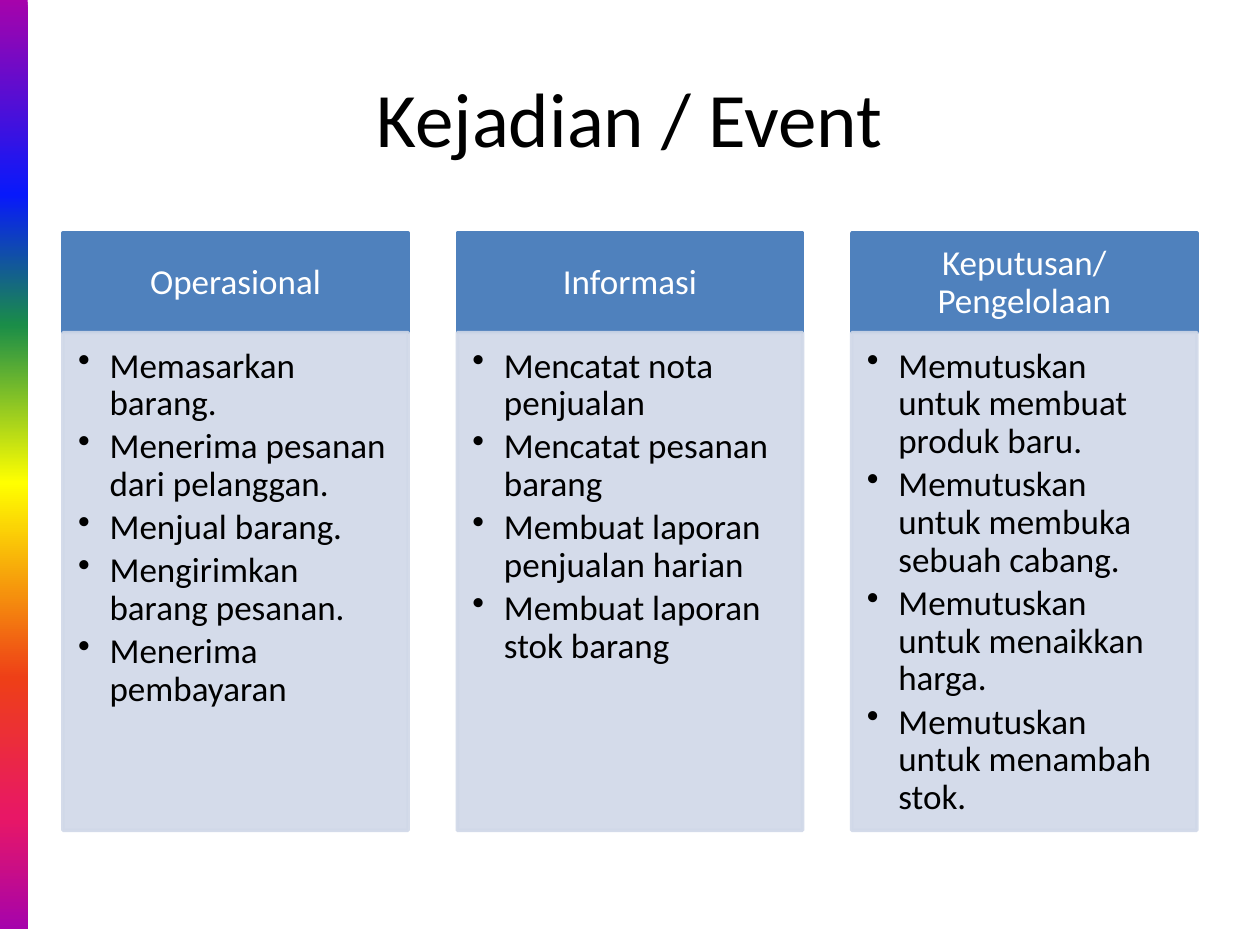
from dataclasses import dataclass

from lxml.etree import SubElement
from pptx import Presentation
from pptx.dml.color import RGBColor
from pptx.enum.shapes import MSO_SHAPE
from pptx.enum.text import MSO_ANCHOR, PP_ALIGN
from pptx.oxml.ns import qn
from pptx.util import Inches, Pt


@dataclass(frozen=True)
class Theme:
    font: str = "Calibri"
    title: int = 44
    body: int = 20
    black: str = "000000"
    white: str = "FFFFFF"
    head: str = "4F81BD"
    panel: str = "D0D8E8"
    alpha: int = 90
    rainbow: tuple = (
        (0, "A603AB"), (21, "0819FB"), (35, "1A8D48"), (52, "FFFF00"),
        (73, "EE3F17"), (88, "E81766"), (100, "A603AB"),
    )


THEME = Theme()

COLUMNS = (
    ("Operasional", (
        "Memasarkan barang.",
        "Menerima pesanan dari pelanggan.",
        "Menjual barang.",
        "Mengirimkan barang pesanan.",
        "Menerima pembayaran",
    )),
    ("Informasi", (
        "Mencatat nota penjualan",
        "Mencatat pesanan barang",
        "Membuat laporan penjualan harian",
        "Membuat laporan stok barang",
    )),
    ("Keputusan/ Pengelolaan", (
        "Memutuskan untuk membuat produk baru.",
        "Memutuskan untuk membuka sebuah cabang.",
        "Memutuskan untuk menaikkan harga.",
        "Memutuskan untuk menambah stok.",
    )),
)

# Column grid, in inches
LEFT, SPAN, WIDTH = 0.5, 9, 2.74
STEP = (SPAN - WIDTH) / (len(COLUMNS) - 1)
TOP, HEAD, BODY = 1.85, 0.79, 3.95


def add_rect(slide, *place):
    shape = slide.shapes.add_shape(MSO_SHAPE.RECTANGLE, *map(Inches, place))
    shape.shadow.inherit = False
    return shape


def paint(shape, color):
    shape.fill.solid()
    shape.fill.fore_color.rgb = RGBColor.from_string(color)
    shape.line.color.rgb = RGBColor.from_string(color)
    shape.line.width = Pt(2)


def fade(shape, alpha):
    for color in shape.element.spPr.iter(qn("a:srgbClr")):
        SubElement(color, qn("a:alpha"), val=str(alpha * 1000))


def set_frame(frame, anchor, left, top, right, bottom):
    frame.word_wrap = True
    frame.vertical_anchor = anchor
    frame.margin_left, frame.margin_top = Inches(left), Inches(top)
    frame.margin_right, frame.margin_bottom = Inches(right), Inches(bottom)


def style(para, size, color, align):
    para.alignment = align
    for run in para.runs:
        run.font.name = THEME.font
        run.font.size = Pt(size)
        run.font.color.rgb = RGBColor.from_string(color)


def add_bullet(para):
    props = para._p.get_or_add_pPr()
    props.set("marL", str(Inches(0.25)))
    props.set("indent", str(-Inches(0.25)))
    SubElement(props, qn("a:buChar"), char="•")


def add_stripe(slide):
    bar = add_rect(slide, 0, 0, 0.22, 7.37)
    bar.line.fill.background()
    bar.fill.gradient()
    bar.fill.gradient_angle = 270
    stops = bar.element.spPr.find(".//" + qn("a:gsLst"))
    for stop in list(stops):
        stops.remove(stop)
    for spot, color in THEME.rainbow:
        stop = SubElement(stops, qn("a:gs"), pos=str(spot * 1000))
        SubElement(stop, qn("a:srgbClr"), val=color)


def add_title(slide, text):
    box = slide.shapes.add_textbox(*map(Inches, (LEFT, 0.3, SPAN, 1.25)))
    frame = box.text_frame
    set_frame(frame, MSO_ANCHOR.MIDDLE, 0.1, 0.05, 0.1, 0.05)
    frame.text = text
    style(frame.paragraphs[0], THEME.title, THEME.black, PP_ALIGN.CENTER)


def add_head(slide, left, text):
    shape = add_rect(slide, left, TOP, WIDTH, HEAD)
    paint(shape, THEME.head)
    frame = shape.text_frame
    set_frame(frame, MSO_ANCHOR.MIDDLE, 0.16, 0.09, 0.16, 0.09)
    frame.text = text
    para = frame.paragraphs[0]
    para.line_spacing = 0.9
    style(para, THEME.body, THEME.white, PP_ALIGN.CENTER)


def add_list(slide, left, items):
    shape = add_rect(slide, left, TOP + HEAD, WIDTH, BODY)
    paint(shape, THEME.panel)
    fade(shape, THEME.alpha)
    frame = shape.text_frame
    set_frame(frame, MSO_ANCHOR.TOP, 0.12, 0.12, 0.16, 0.17)
    frame.text = "\n".join(items)
    for para in frame.paragraphs:
        add_bullet(para)
        para.line_spacing = 0.9
        para.space_after = Pt(3)
        style(para, THEME.body, THEME.black, PP_ALIGN.LEFT)


def main():
    deck = Presentation()
    deck.slide_width, deck.slide_height = Inches(10), Inches(7.5)
    slide = deck.slides.add_slide(deck.slide_layouts[6])

    # Side stripe and title
    add_stripe(slide)
    add_title(slide, "Kejadian / Event")

    # Three columns of events
    for i, (name, items) in enumerate(COLUMNS):
        left = LEFT + i * STEP
        add_head(slide, left, name)
        add_list(slide, left, items)

    deck.save("out.pptx")


if __name__ == "__main__":
    main()
